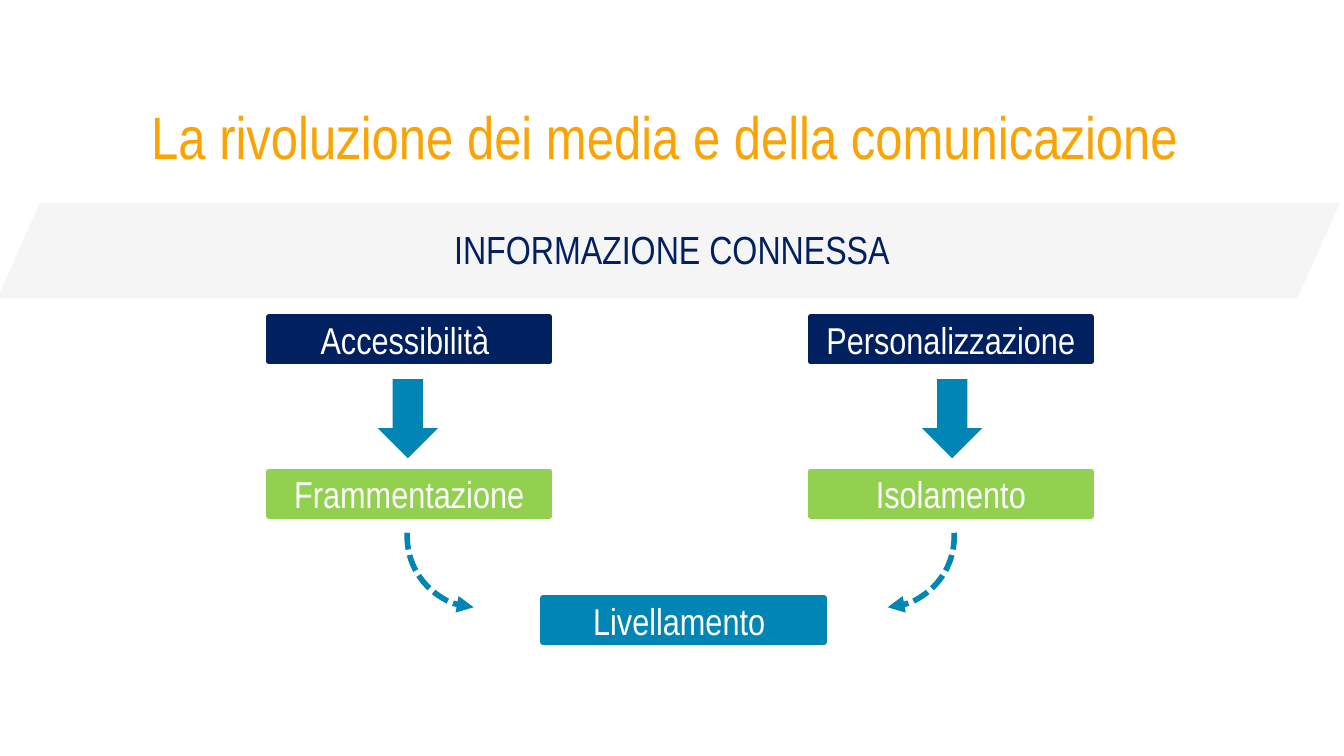
import pptx
import pptx.dml.color
import pptx.enum.dml
import pptx.enum.shapes
import pptx.enum.text
import pptx.util
from lxml import etree
from pptx.oxml.ns import qn

WIDE = 10
HIGH = WIDE * 9 / 16
FONT = "Arial Narrow"
NAVY, BLUE, GREEN, GOLD = "002060", "0085B4", "92D050", "FCA304"
WHITE, GREY = "FFFFFF", "F2F2F2"
BOX_W, BOX_H = 2.09, 0.33
LEFT, RIGHT = 2, 6.03
TOP, MID, LOW = 2.36, 3.51, 4.45
KIND = pptx.enum.shapes.MSO_SHAPE


def paint(target, color):
    """Give a fill or a line fill one solid colour."""
    target.solid()
    target.fore_color.rgb = pptx.dml.color.RGBColor.from_string(color)


def write(shape, text, size, color):
    """Put one centred run in the middle of a shape."""
    frame = shape.text_frame
    frame.word_wrap = True
    frame.margin_top = frame.margin_bottom = 0
    frame.vertical_anchor = pptx.enum.text.MSO_ANCHOR.MIDDLE
    line = frame.paragraphs[0]
    line.alignment = pptx.enum.text.PP_ALIGN.CENTER
    run = line.add_run()
    run.text = text
    run.font.name = FONT
    run.font.size = pptx.util.Pt(size)
    paint(run.font.fill, color)


def label(slide, top, high, text, size, color):
    """Add a line of text across the full slide width."""
    area = [pptx.util.Inches(v) for v in (0, top, WIDE, high)]
    write(slide.shapes.add_textbox(*area), text, size, color)


def shape(slide, kind, left, top, wide, high, fill=None, edge=None):
    """Add a flat preset shape with an optional fill and 3 pt edge."""
    area = [pptx.util.Inches(v) for v in (left, top, wide, high)]
    item = slide.shapes.add_shape(kind, *area)
    item.shadow.inherit = False
    if fill:
        paint(item.fill, fill)
    else:
        item.fill.background()
    if edge:
        paint(item.line.fill, edge)
        item.line.width = pptx.util.Pt(3)
    else:
        item.line.fill.background()
    return item


def band(slide):
    item = shape(slide, KIND.PARALLELOGRAM, -0.02, 1.51, 9.99, 0.71, GREY)
    item.adjustments[0] = 0.447
    tint = item.fill._xPr.find(".//" + qn("a:srgbClr"))
    etree.SubElement(tint, qn("a:alpha"), val="70000")


def box(slide, left, top, text, color):
    item = shape(slide, KIND.RECTANGLE, left, top, BOX_W, BOX_H, color, color)
    write(item, text, 20, WHITE)


def curve(slide, left, turn, flip=False):
    """Add a dashed quarter arc that ends in an arrowhead."""
    item = shape(slide, KIND.ARC, left, 3.47, 1.05, 1.05, edge=BLUE)
    item.rotation = turn
    item.line.dash_style = pptx.enum.dml.MSO_LINE.SQUARE_DOT
    etree.SubElement(item.line._get_or_add_ln(), qn("a:tailEnd"),
                     type="triangle")
    if flip:
        item._element.spPr.find(qn("a:xfrm")).set("flipH", "1")


def main():
    deck = pptx.Presentation()
    deck.slide_width = pptx.util.Inches(WIDE)
    deck.slide_height = pptx.util.Inches(HIGH)
    slide = deck.slides.add_slide(deck.slide_layouts[6])

    band(slide)
    label(slide, 0.54, 0.94,
          "La rivoluzione dei media e della comunicazione ", 32, GOLD)
    label(slide, 1.57, 0.56, "INFORMAZIONE CONNESSA", 21, NAVY)

    chains = ((LEFT, 2.81, "Accessibilità ", "Frammentazione"),
              (RIGHT, 6.86, "Personalizzazione", "Isolamento"))
    for left, arrow, cause, effect in chains:
        box(slide, left, TOP, cause, NAVY)
        shape(slide, KIND.DOWN_ARROW, arrow, 2.82, 0.45, 0.59, BLUE)
        box(slide, left, MID, effect, GREEN)

    box(slide, 4.04, LOW, "Livellamento ", BLUE)
    curve(slide, 6.05, 86.7)
    curve(slide, 3.03, 273.3, flip=True)
    deck.save("out.pptx")


if __name__ == "__main__":
    main()
